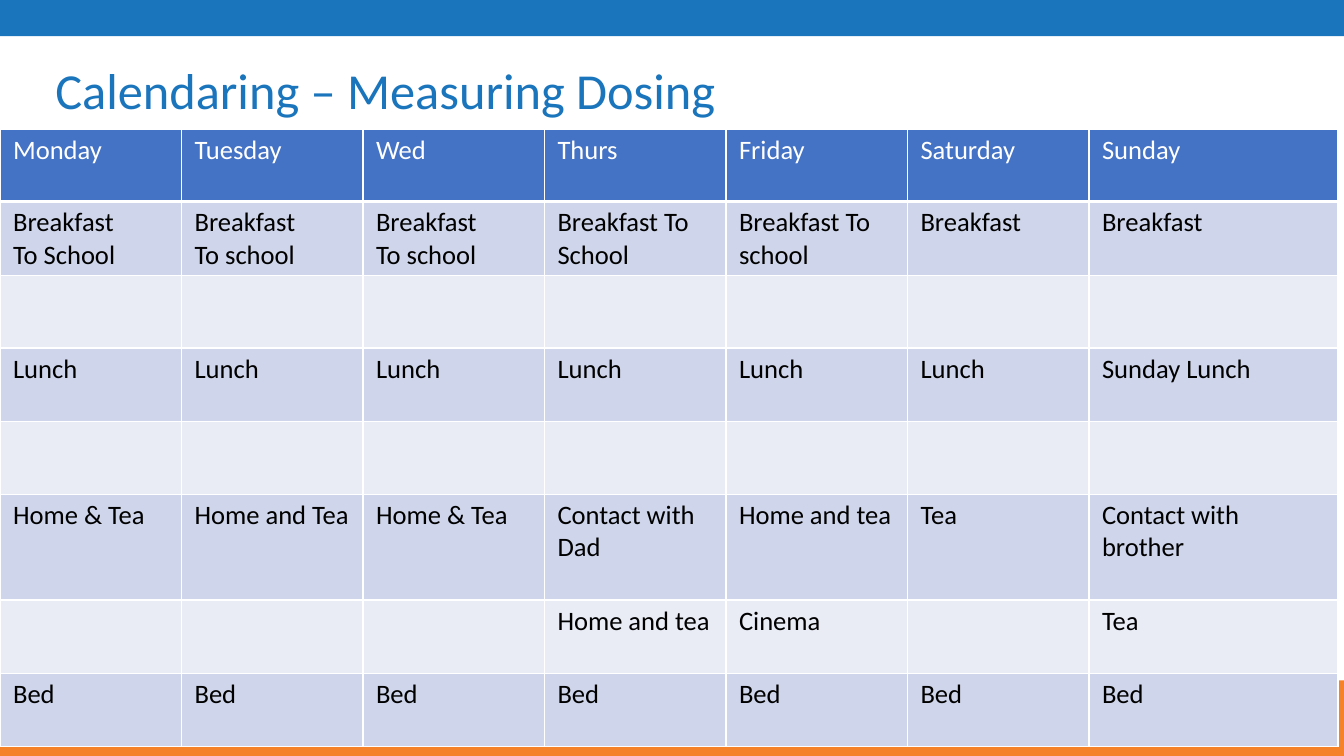
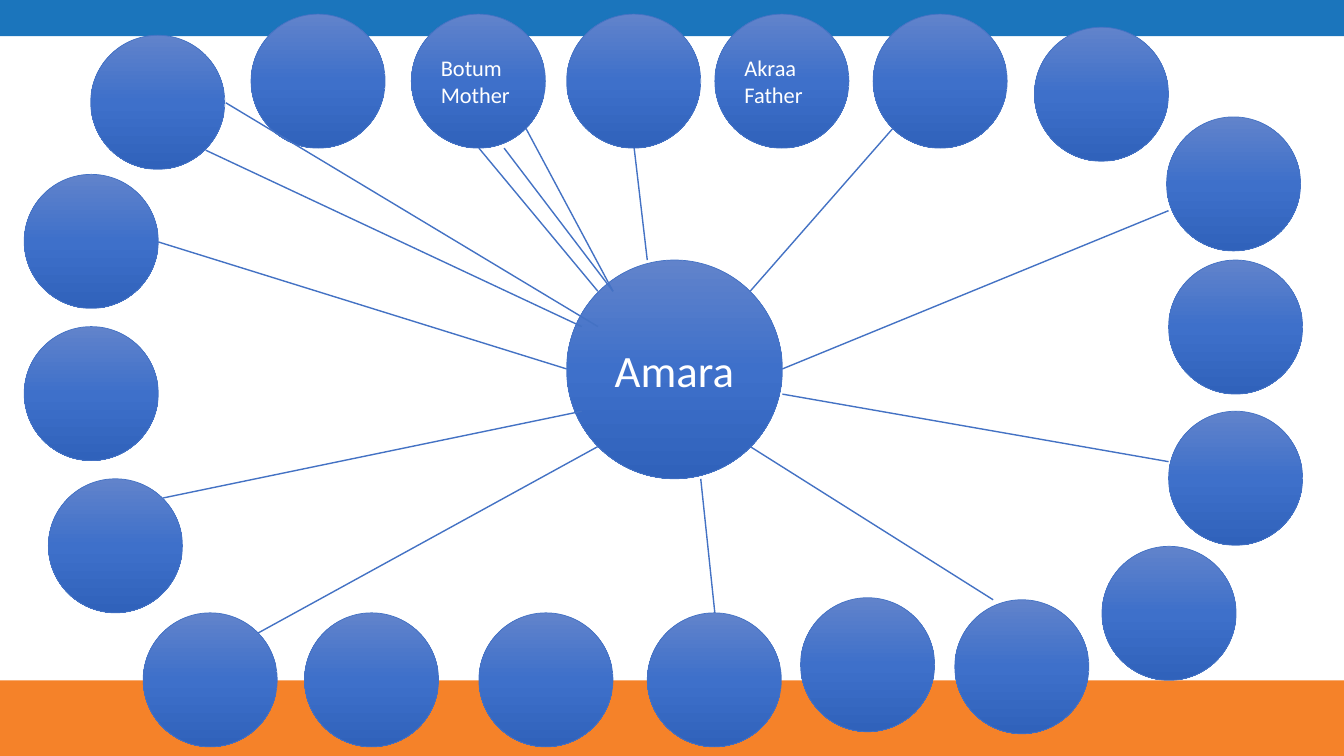
import copy
import lxml.etree
import pptx
import pptx.dml.color
import pptx.enum.shapes
import pptx.enum.text
import pptx.oxml.ns
import pptx.util

Inches = pptx.util.Inches
Pt = pptx.util.Pt
SHAPE = pptx.enum.shapes.MSO_SHAPE
ALIGN = pptx.enum.text.PP_ALIGN
MIDDLE = pptx.enum.text.MSO_ANCHOR.MIDDLE
qn = pptx.oxml.ns.qn

# Shared look
WIDE, HIGH = 13.33, 7.5
FONT = "Calibri"
NAVY, ORANGE, BLUE = "1B75BC", "F58229", "4472C4"
WHITE, BLACK = "FFFFFF", "000000"
ROWS = ["CFD5EA", "E9EBF5"]
SHADES = ["6183CB", "3E70CA", "3062BB"]
BANDS = [(0, 0.36, NAVY), (6.75, 0.75, ORANGE)]

# Week table, with "\n" between paragraphs
COLS = [1.8] * 6 + [2.47]
TALL = [0.72, 0.73, 0.72, 0.73, 0.72, 1.05, 0.73, 0.72]
WEEK = [
    ["Monday", "Tuesday", "Wed", "Thurs", "Friday", "Saturday", "Sunday"],
    ["Breakfast\nTo School", "Breakfast\nTo school", "Breakfast\nTo school",
     "Breakfast To School", "Breakfast To school", "Breakfast", "Breakfast"],
    [""] * 7,
    ["Lunch"] * 6 + ["Sunday Lunch"],
    [""] * 7,
    ["Home & Tea", "Home and Tea", "Home & Tea", "Contact with Dad",
     "Home and tea", "Tea", "Contact with brother"],
    ["", "", "", "Home and tea", "Cinema", "", "Tea"],
    ["Bed"] * 7,
]

# Circle map: left, top and text of each person
SIZE = 1.33
PEOPLE = [
    # top
    (0.9, 0.35, ""), (2.49, 0.14, ""), (4.08, 0.14, "Botum Mother"),
    (5.62, 0.14, ""), (7.09, 0.14, "Akraa Father"), (8.66, 0.14, ""),
    (10.26, 0.27, ""),
    # right
    (11.57, 1.16, ""), (11.59, 2.58, ""), (11.59, 4.08, ""),
    (10.93, 5.42, ""),
    # bottom
    (1.42, 6.08, ""), (3.02, 6.08, ""), (4.75, 6.08, ""),
    (6.42, 6.08, ""), (7.94, 5.93, ""), (9.47, 5.95, ""),
    # left
    (0.24, 1.73, ""), (0.24, 3.24, ""), (0.48, 4.75, ""),
]
# Links: outer end, then end at the centre
LINKS = [
    (6.29, 1.47, 6.42, 2.58), (4.75, 1.47, 5.93, 2.89),
    (2.04, 1.49, 5.77, 3.24), (1.57, 2.4, 5.62, 3.66),
    (1.62, 4.94, 5.77, 4.08), (2.56, 6.28, 5.93, 4.43),
    (7.09, 6.08, 6.95, 4.75), (2.24, 1.02, 5.93, 3.24),
    (5.22, 1.28, 6.08, 2.89), (5, 1.47, 6.08, 2.89),
    (8.85, 1.28, 7.44, 2.89), (11.59, 2.09, 7.76, 3.66),
    (11.59, 4.58, 7.76, 3.91), (9.85, 5.95, 7.44, 4.43),
]


def tint(code):
    return pptx.dml.color.RGBColor.from_string(code)


def write(frame, text, size, color, align=ALIGN.LEFT):
    for i, line in enumerate(text.split("\n")):
        para = frame.add_paragraph() if i else frame.paragraphs[0]
        para.alignment = align
        para.font.size = Pt(size)
        if line:
            run = para.add_run()
            run.text = line
            font = run.font
            font.name, font.size, font.bold = FONT, Pt(size), False
            font.color.rgb = tint(color)


def place(slide, kind, *box):
    shape = slide.shapes.add_shape(kind, *map(Inches, box))
    shape.shadow.inherit = False
    return shape


def start(deck):
    """Add a blank slide with the colour bands."""
    slide = deck.slides.add_slide(deck.slide_layouts[6])
    for top, tall, color in BANDS:
        band = place(slide, SHAPE.RECTANGLE, 0, top, WIDE, tall)
        band.fill.solid()
        band.fill.fore_color.rgb = tint(color)
        band.line.fill.background()
    return slide


def head(slide, text):
    box = slide.shapes.add_textbox(*map(Inches, (0.45, 0.57, 11.97, 0.71)))
    frame = box.text_frame
    frame.word_wrap = True
    frame.vertical_anchor = MIDDLE
    write(frame, text, 36, NAVY)
    frame.paragraphs[0].line_spacing = 0.9


def edge(cell, first):
    """White cell borders, heavier below the header."""
    props = cell._tc.get_or_add_tcPr()
    for side in "LRTB":
        wide = 3 if first and side == "B" else 1
        line = lxml.etree.SubElement(props, qn("a:ln" + side), w=str(Pt(wide)))
        fill = lxml.etree.SubElement(line, qn("a:solidFill"))
        lxml.etree.SubElement(fill, qn("a:srgbClr"), val=WHITE)


def grid(slide):
    box = map(Inches, (0, 1.28, sum(COLS), sum(TALL)))
    table = slide.shapes.add_table(len(TALL), len(COLS), *box).table
    for col, wide in zip(table.columns, COLS):
        col.width = Inches(wide)
    for r, (row, tall) in enumerate(zip(table.rows, TALL)):
        row.height = Inches(tall)
        for cell, text in zip(row.cells, WEEK[r]):
            edge(cell, r == 0)
            cell.fill.solid()
            cell.fill.fore_color.rgb = tint(ROWS[(r - 1) % 2] if r else BLUE)
            cell.margin_left, cell.margin_right = Inches(0.13), Inches(0.12)
            write(cell.text_frame, text, 19, BLACK if r else WHITE)


def shade(shape):
    """Three-stop gradient from top to bottom."""
    fill = shape.fill
    fill.gradient()
    fill.gradient_angle = 270
    stops = shape.element.spPr.find(".//" + qn("a:gsLst"))
    stops.insert(1, copy.deepcopy(stops[0]))
    for i, (stop, color) in enumerate(zip(fill.gradient_stops, SHADES)):
        stop.position = i / 2
        stop.color.rgb = tint(color)


def disc(slide, left, top, wide, tall, text, size, align=ALIGN.LEFT):
    shape = place(slide, SHAPE.OVAL, left, top, wide, tall)
    shade(shape)
    shape.line.color.rgb = tint(BLUE)
    shape.line.width = Pt(0.5)
    shape.text_frame.vertical_anchor = MIDDLE
    write(shape.text_frame, text, size, WHITE, align)


def link(slide, *ends):
    kind = pptx.enum.shapes.MSO_CONNECTOR.STRAIGHT
    line = slide.shapes.add_connector(kind, *map(Inches, ends))
    line.line.color.rgb = tint(BLUE)
    line.line.width = Pt(1)
    lxml.etree.SubElement(line.element.spPr, qn("a:effectLst"))


def main():
    deck = pptx.Presentation()
    deck.slide_width, deck.slide_height = Inches(WIDE), Inches(HIGH)

    # Weekly calendar
    slide = start(deck)
    head(slide, "Calendaring – Measuring Dosing")
    grid(slide)

    # People around Amara
    slide = start(deck)
    for left, top, text in PEOPLE:
        disc(slide, left, top, SIZE, SIZE, text, 16)
    disc(slide, 5.62, 2.58, 2.14, 2.17, "Amara", 32, ALIGN.CENTER)
    for ends in LINKS:
        link(slide, *ends)

    deck.save("out.pptx")


if __name__ == "__main__":
    main()
